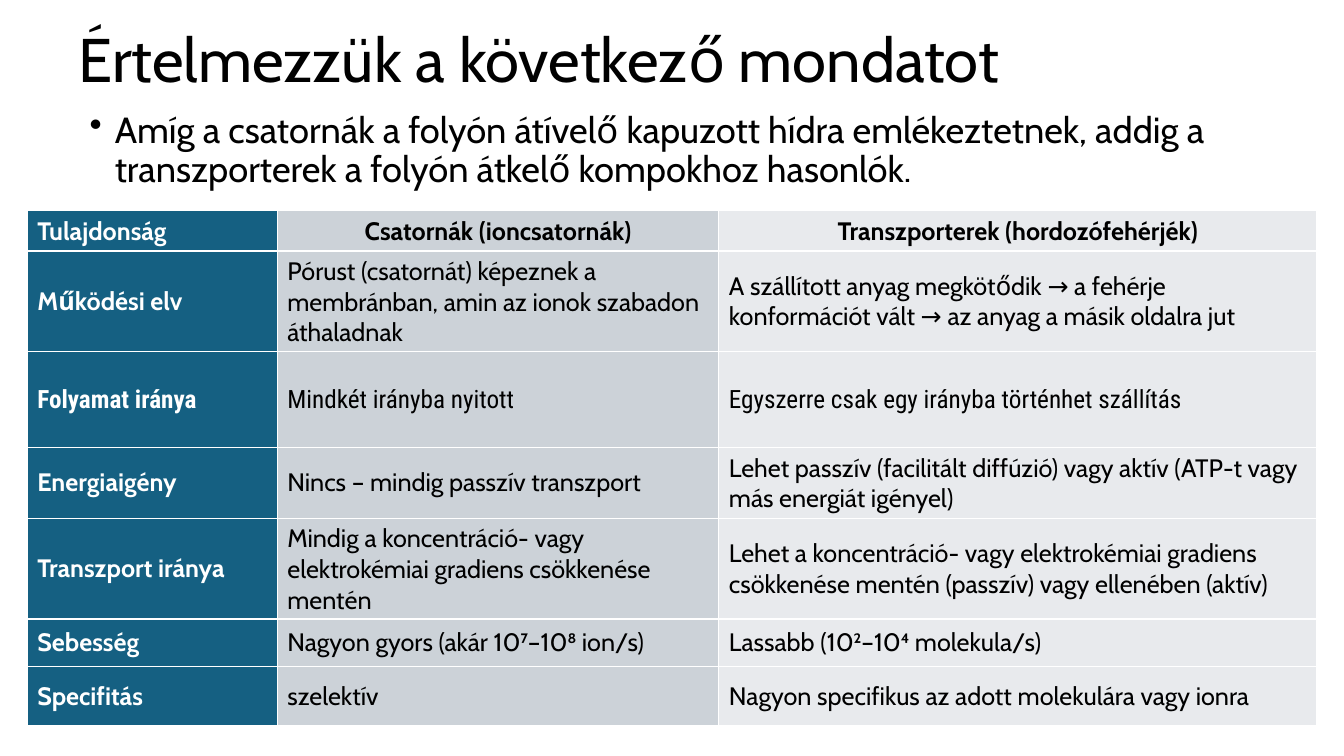
from dataclasses import dataclass

from lxml import etree
from pptx import Presentation
from pptx import util as u
from pptx.dml.color import RGBColor
from pptx.enum import text
from pptx.oxml import ns


@dataclass(frozen=True)
class Theme:
    font: str = "Cabin"
    narrow: str = "Roboto Condensed"
    black: str = "000000"
    white: str = "FFFFFF"
    fills: tuple = ("156082", "CCD2D8", "E8EAED")
    title: float = 44
    body: float = 25.9
    cell: float = 18


THEME = Theme()
TITLE = "Értelmezzük a következő mondatot"
BODY = ("Amíg a csatornák a folyón átívelő kapuzott hídra emlékeztetnek, "
        "addig a transzporterek a folyón átkelő kompokhoz hasonlók.")
COLS = (2.48, 4.38, 5.93)
NARROW = 2
ROWS = (
    (0.35, "Tulajdonság", "Csatornák (ioncsatornák)",
     "Transzporterek (hordozófehérjék)"),
    (0.95, "Működési elv",
     "Pórust (csatornát) képeznek a membránban, amin az ionok szabadon áthaladnak",
     "A szállított anyag megkötődik → a fehérje konformációt vált "
     "→ az anyag a másik oldalra jut"),
    (0.95, "Folyamat iránya", "Mindkét irányba nyitott",
     "Egyszerre csak egy irányba történhet szállítás"),
    (0.63, "Energiaigény", "Nincs – mindig passzív transzport",
     "Lehet passzív (facilitált diffúzió) vagy aktív "
     "(ATP-t vagy más energiát igényel)"),
    (0.83, "Transzport iránya",
     "Mindig a koncentráció- vagy elektrokémiai gradiens csökkenése mentén",
     "Lehet a koncentráció- vagy elektrokémiai gradiens csökkenése mentén "
     "(passzív) vagy ellenében (aktív)"),
    (0.47, "Sebesség", "Nagyon gyors (akár 10⁷–10⁸ ion/s)",
     "Lassabb (10²–10⁴ molekula/s)"),
    (0.59, "Specifitás", "szelektív",
     "Nagyon specifikus az adott molekulára vagy ionra"),
)


def style(para, size, color=THEME.black, face=THEME.font, bold=False):
    font = para.font
    font.size, font.name, font.bold = u.Pt(size), face, bold
    font.color.rgb = RGBColor.from_string(color)


def add_text(slide, box, words, size, anchor):
    frame = slide.shapes.add_textbox(*map(u.Inches, box)).text_frame
    frame.word_wrap = True
    frame.vertical_anchor = anchor
    para = frame.paragraphs[0]
    para.text = words
    para.line_spacing = 0.9
    style(para, size)
    return para


def add_bullet(para):
    props = para._p.get_or_add_pPr()
    props.set("marL", str(u.Inches(0.25)))
    props.set("indent", str(u.Inches(-0.25)))
    mark = etree.Element(ns.qn("a:buChar"), char="•")
    props.find(ns.qn("a:defRPr")).addprevious(mark)


def add_edges(cell):
    props = cell._tc.get_or_add_tcPr()
    for i, side in enumerate(("lnL", "lnR", "lnT", "lnB")):
        line = etree.Element(ns.qn("a:" + side), w=str(u.Pt(1)))
        fill = etree.SubElement(line, ns.qn("a:solidFill"))
        etree.SubElement(fill, ns.qn("a:srgbClr"), val=THEME.white)
        props.insert(i, line)


def fill_cell(cell, words, row, col):
    cell.fill.solid()
    cell.fill.fore_color.rgb = RGBColor.from_string(THEME.fills[col])
    cell.vertical_anchor = text.MSO_ANCHOR.MIDDLE
    para = cell.text_frame.paragraphs[0]
    para.text = words
    if row == 0 and col > 0:
        para.alignment = text.PP_ALIGN.CENTER
    style(para, THEME.cell,
          THEME.black if col else THEME.white,
          THEME.narrow if row == NARROW else THEME.font,
          row == 0 or col == 0)
    add_edges(cell)


def add_grid(slide, left, top):
    high = sum(row[0] for row in ROWS)
    box = map(u.Inches, (left, top, sum(COLS), high))
    table = slide.shapes.add_table(len(ROWS), len(COLS), *box).table
    for col, width in enumerate(COLS):
        table.columns[col].width = u.Inches(width)
    for row, (height, *words) in enumerate(ROWS):
        table.rows[row].height = u.Inches(height)
        for col, word in enumerate(words):
            fill_cell(table.cell(row, col), word, row, col)


def main():
    deck = Presentation()
    deck.slide_width, deck.slide_height = u.Inches(13.33), u.Inches(7.5)
    slide = deck.slides.add_slide(deck.slide_layouts[6])
    add_text(slide, (0.68, -0.1, 11.5, 1.45), TITLE, THEME.title,
             text.MSO_ANCHOR.MIDDLE)
    para = add_text(slide, (0.79, 1.06, 11.5, 1), BODY, THEME.body,
                    text.MSO_ANCHOR.TOP)
    para.space_before = u.Pt(10)
    add_bullet(para)
    add_grid(slide, 0.27, 2.09)
    deck.save("out.pptx")


if __name__ == "__main__":
    main()
